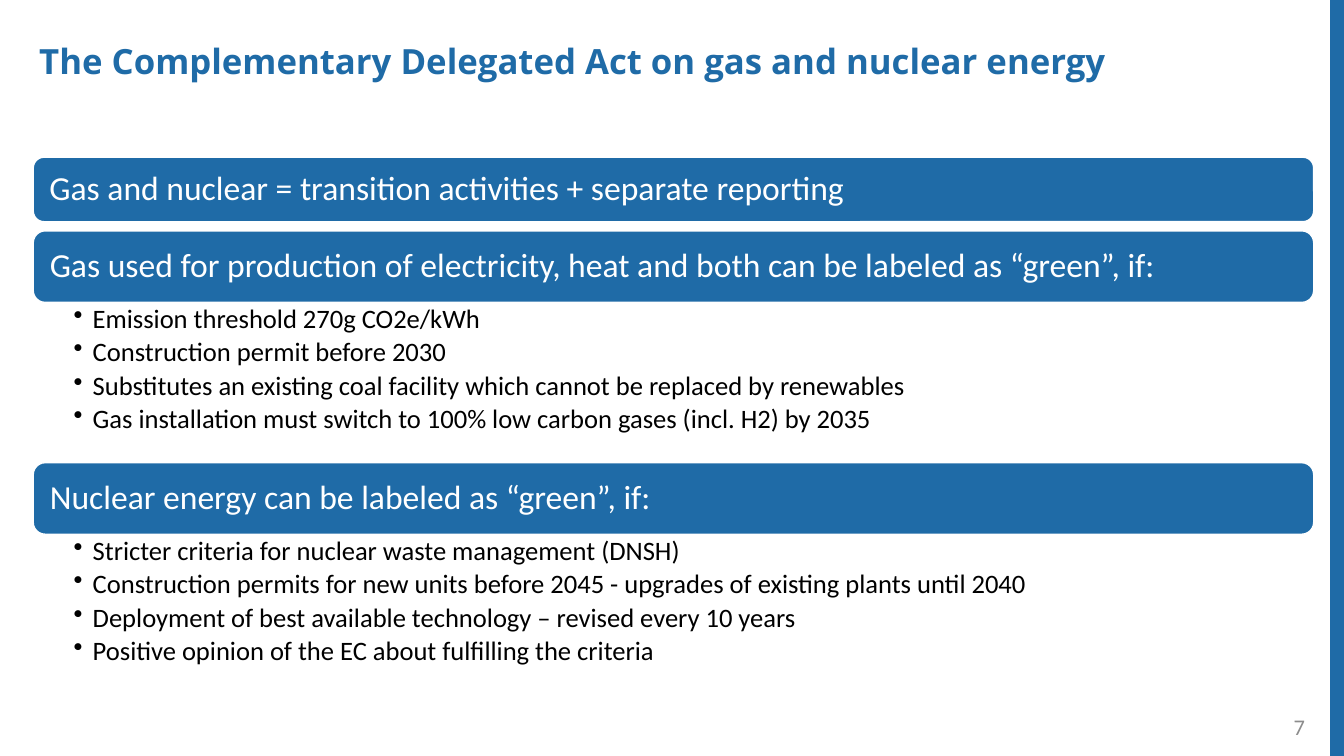
import pptx
import pptx.util
import pptx.dml.color
import pptx.enum.shapes
import pptx.enum.text
import pptx.oxml.ns
from lxml import etree

Inches, Pt = pptx.util.Inches, pptx.util.Pt
ALIGN, ANCHOR = pptx.enum.text.PP_ALIGN, pptx.enum.text.MSO_ANCHOR
BLUE, WHITE, BLACK, GREY = "1F6BA7", "FFFFFF", "000000", "8C8C8C"
LEFT, WIDTH = 0.33, 12.7
LIST_HEIGHT = 1.59

# Top, height, heading and conditions of each block
BLOCKS = [
    (1.56, 0.64, "Gas and nuclear = transition activities + separate reporting", []),
    (2.29, 0.71, "Gas used for production of electricity, heat and both can be labeled as “green”, if:", [
        "Emission threshold 270g CO2e/kWh",
        "Construction permit before 2030",
        "Substitutes an existing coal facility which cannot be replaced by renewables",
        "Gas installation must switch to 100% low carbon gases (incl. H2) by 2035",
    ]),
    (4.59, 0.71, "Nuclear energy can be labeled as “green”, if:", [
        "Stricter criteria for nuclear waste management (DNSH)",
        "Construction permits for new units before 2045 - upgrades of existing plants until 2040",
        "Deployment of best available technology – revised every 10 years",
        "Positive opinion of the EC about fulfilling the criteria",
    ]),
]


def rgb(value):
    return pptx.dml.color.RGBColor.from_string(value)


def set_frame(shape, margins, anchor):
    tf = shape.text_frame
    tf.word_wrap = True
    tf.vertical_anchor = anchor
    tf.margin_left, tf.margin_top, tf.margin_right, tf.margin_bottom = map(Inches, margins)
    return tf


def add_run(p, text, size, color, font="Calibri", bold=False):
    r = p.add_run()
    r.text = text
    r.font.name, r.font.size, r.font.bold = font, Pt(size), bold
    r.font.color.rgb = rgb(color)


def add_text(s, box, text, size, color, anchor=ANCHOR.TOP, align=ALIGN.LEFT,
             line_spacing=1.0, **style):
    tb = s.shapes.add_textbox(*map(Inches, box))
    p = set_frame(tb, (0.1, 0.05, 0.1, 0.05), anchor).paragraphs[0]
    p.alignment, p.line_spacing = align, line_spacing
    add_run(p, text, size, color, **style)


def add_bar(s, box, text):
    sp = s.shapes.add_shape(pptx.enum.shapes.MSO_SHAPE.ROUNDED_RECTANGLE, *map(Inches, box))
    sp.shadow.inherit = False
    sp.fill.solid()
    sp.fill.fore_color.rgb = rgb(BLUE)
    sp.line.color.rgb = rgb(WHITE)
    sp.line.width = Pt(1)
    p = set_frame(sp, (0.13, 0.1, 0.13, 0.1), ANCHOR.MIDDLE).paragraphs[0]
    p.alignment, p.line_spacing = ALIGN.LEFT, 0.9
    add_run(p, text, 24, WHITE)


def add_bullets(s, box, items):
    tb = s.shapes.add_textbox(*map(Inches, box))
    tf = set_frame(tb, (0.4, 0.03, 0.19, 0.03), ANCHOR.TOP)
    for i, item in enumerate(items):
        p = tf.add_paragraph() if i else tf.paragraphs[0]
        pPr = p._p.get_or_add_pPr()
        pPr.set("marL", str(Inches(0.19)))
        pPr.set("indent", str(-Inches(0.19)))
        etree.SubElement(pPr, pptx.oxml.ns.qn("a:buChar"), char="•")
        p.line_spacing, p.space_after = 0.9, Pt(3.4)
        add_run(p, item, 19, BLACK)


def add_block(s, top, height, heading, items):
    add_bar(s, (LEFT, top, WIDTH, height), heading)
    if items:
        add_bullets(s, (LEFT, top + height, WIDTH, LIST_HEIGHT), items)


def add_edge(s, x, height):
    line = s.shapes.add_connector(pptx.enum.shapes.MSO_CONNECTOR.STRAIGHT,
                                  Inches(x), 0, Inches(x), Inches(height))
    line.line.color.rgb = rgb(BLUE)
    line.line.width = Pt(12)
    etree.SubElement(line._element.spPr, pptx.oxml.ns.qn("a:effectLst"))


def main():
    prs = pptx.Presentation()
    prs.slide_width, prs.slide_height = Inches(13.33), Inches(7.5)
    s = prs.slides.add_slide(prs.slide_layouts[6])

    # Right edge and title
    add_edge(s, 13.27, 7.5)
    add_text(s, (0.29, 0.46, 10.9, 0.58),
             "The Complementary Delegated Act on gas and nuclear energy",
             24.8, BLUE, line_spacing=0.7, font="Open Sans", bold=True)

    # Headings with their conditions
    for block in BLOCKS:
        add_block(s, *block)

    # Page number
    add_text(s, (10.04, 7.01, 3, 0.4), "7", 16, GREY, ANCHOR.MIDDLE, ALIGN.RIGHT)
    prs.save("out.pptx")


if __name__ == "__main__":
    main()
